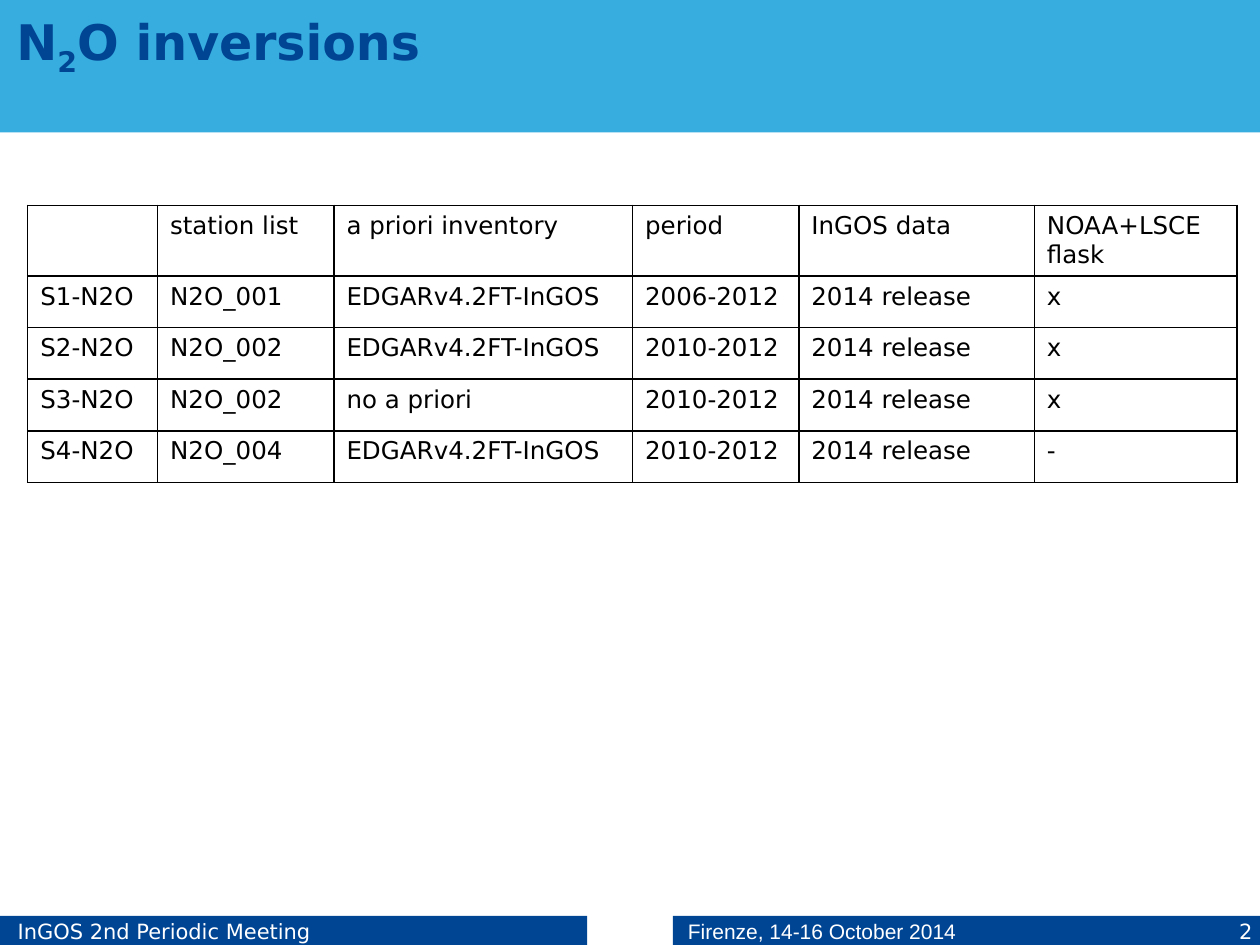
from lxml import etree
from pptx import Presentation
from pptx.dml.color import RGBColor
from pptx.enum import shapes, text
from pptx.oxml import ns
from pptx.util import Inches, Pt

HUES = {"band": "37ACDE", "navy": "004494", "white": "FFFFFF", "black": "000000"}
FONT = "DejaVu Sans"


def add_run(par, words, size, hue, face=FONT, bold=False):
    run = par.add_run()
    run.text = words
    run.font.size = Pt(size)
    run.font.name = face
    run.font.bold = bold
    run.font.color.rgb = RGBColor.from_string(HUES[hue])
    return run


def add_bar(left, top, width, height, hue):
    bar = slide.shapes.add_shape(shapes.MSO_SHAPE.RECTANGLE, Inches(left),
                                 Inches(top), Inches(width), Inches(height))
    bar.shadow.inherit = False
    bar.fill.solid()
    bar.fill.fore_color.rgb = RGBColor.from_string(HUES[hue])
    bar.line.fill.background()
    return bar


deck = Presentation()
deck.slide_width, deck.slide_height = Inches(10), Inches(7.5)
slide = deck.slides.add_slide(deck.slide_layouts[5])

# Header band, placed behind the title
band = add_bar(0, 0, 10, 1.05, "band")
slide.shapes._spTree.insert(2, band._element)

# Title
title = slide.shapes.title
title.left, title.top = Inches(0.13), Inches(0.09)
title.width, title.height = Inches(9.71), Inches(0.47)
frame = title.text_frame
frame.margin_left = frame.margin_right = frame.margin_top = frame.margin_bottom = 0
frame.vertical_anchor = text.MSO_ANCHOR.TOP
frame.auto_size = text.MSO_AUTO_SIZE.NONE
par = frame.paragraphs[0]
par.alignment = text.PP_ALIGN.LEFT
add_run(par, "N", 28, "navy", bold=True)
sub = add_run(par, "2", 28, "navy", bold=True)
sub.font._element.set("baseline", "-25000")
add_run(par, "O inversions", 28, "navy", bold=True)

# Footer bars: meeting on the left, place and page number on the right
pars = []
for left, inset in [(0, 0.14), (5.34, 0.12)]:
    frame = add_bar(left, 7.27, 4.66, 0.24, "navy").text_frame
    frame.margin_left, frame.margin_right = Inches(inset), Inches(0.04)
    frame.margin_top = frame.margin_bottom = Inches(0.02)
    frame.paragraphs[0].alignment = text.PP_ALIGN.LEFT
    pars.append(frame.paragraphs[0])
meet, place = pars
add_run(meet, "InGOS 2nd Periodic Meeting", 12, "white")
tabs = etree.SubElement(place._p.get_or_add_pPr(), ns.qn("a:tabLst"))
etree.SubElement(tabs, ns.qn("a:tab"), pos=str(Inches(4.48)), algn="r")
add_run(place, "Firenze, 14-16 October 2014\t", 12, "white", "Arial")
add_run(place, "2", 12, "white")

# Table of inversion runs
rows = [
    ["", "station list", "a priori inventory", "period", "InGOS data", "NOAA+LSCE flask"],
    ["S1-N2O", "N2O_001", "EDGARv4.2FT-InGOS", "2006-2012", "2014 release", "x"],
    ["S2-N2O", "N2O_002", "EDGARv4.2FT-InGOS", "2010-2012", "2014 release", "x"],
    ["S3-N2O", "N2O_002", "no a priori", "2010-2012", "2014 release", "x"],
    ["S4-N2O", "N2O_004", "EDGARv4.2FT-InGOS", "2010-2012", "2014 release", "-"],
]
widths = [1.03, 1.4, 2.37, 1.32, 1.87, 1.61]
table = slide.shapes.add_table(len(rows), len(widths), Inches(0.22), Inches(1.63),
                               Inches(sum(widths)), Inches(2.19)).table
for col, width in zip(table.columns, widths):
    col.width = Inches(width)
for i, row in enumerate(rows):
    table.rows[i].height = Inches(0.41 if i else 0.56)
    for j, words in enumerate(row):
        cell = table.cell(i, j)
        if words:
            add_run(cell.text_frame.paragraphs[0], words, 14, "black")
        # Borders must come before the fill
        props = cell._tc.get_or_add_tcPr()
        for side in ("lnL", "lnR", "lnT", "lnB"):
            line = etree.SubElement(props, ns.qn("a:" + side), w=str(Pt(1)))
            fill = etree.SubElement(line, ns.qn("a:solidFill"))
            etree.SubElement(fill, ns.qn("a:srgbClr"), val=HUES["black"])
        cell.fill.background()

deck.save("out.pptx")
